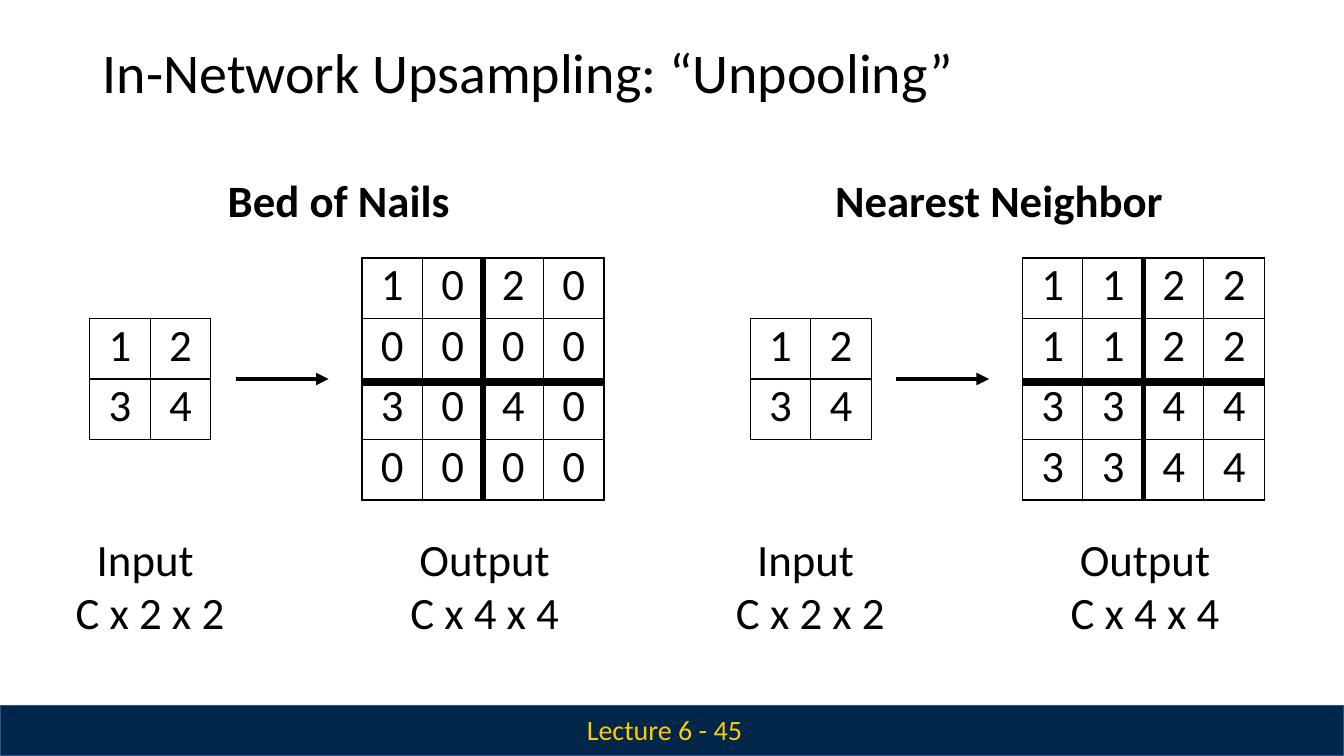
from pptx import Presentation
from pptx import util as u
from pptx.dml.color import RGBColor
from pptx.enum import shapes, text
from pptx.oxml.ns import qn
from lxml import etree

FONT = "Calibri"
COLOURS = {"ink": "000000", "navy": "00274A", "edge": "2D518E", "gold": "FFC904"}
CELL = 60
THIN, BAR_ACROSS, BAR_DOWN = 1, 6, 4.5
INPUT = ["12", "34"]
PANELS = [
    (74, "Bed of Nails", ["1020", "0000", "3040", "0000"]),
    (729, "Nearest Neighbor", ["1122", "1122", "3344", "3344"]),
]


def px(length):
    """One px is a hundredth of an inch."""
    return u.Emu(length * 9144)


def colour(name):
    return RGBColor.from_string(COLOURS[name])


def style(para, size, ink="ink", bold=False):
    para.font.name = FONT
    para.font.size = u.Pt(size)
    para.font.bold = bold
    para.font.color.rgb = colour(ink)


def add_text(page, box, words, size, top=0, left=0, **look):
    frame = page.shapes.add_textbox(*map(px, box)).text_frame
    frame.word_wrap = True
    frame.margin_left, frame.margin_top = px(left), px(top)
    frame.margin_right = frame.margin_bottom = 0
    para = frame.paragraphs[0]
    para.text = words
    style(para, size, **look)
    return para


def set_borders(cell, widths):
    props = cell._tc.get_or_add_tcPr()
    for side, width in widths.items():
        line = etree.SubElement(props, qn(f"a:ln{side}"), w=str(u.Pt(width)))
        fill = etree.SubElement(line, qn("a:solidFill"))
        etree.SubElement(fill, qn("a:srgbClr"), val=COLOURS["ink"])


def add_grid(page, left, top, rows, split=None):
    """Square grid of digits; heavy bars cross before row and column `split`."""
    count = len(rows)
    frame = page.shapes.add_table(count, count, px(left), px(top),
                                  px(CELL * count), px(CELL * count))
    table = frame.table
    table.first_row = table.horz_banding = False
    for r, digits in enumerate(rows):
        # The row above the heavy bar takes a little height from the one below.
        shift = {split: -3, split - 1: 3}.get(r, 0) if split else 0
        table.rows[r].height = px(CELL + shift)
        for c, digit in enumerate(digits):
            cell = table.cell(r, c)
            cell.margin_left = cell.margin_right = 0
            cell.margin_top = cell.margin_bottom = 0
            set_borders(cell, {
                "L": BAR_DOWN if c == split else THIN,
                "R": BAR_DOWN if c + 1 == split else THIN,
                "T": BAR_ACROSS if r == split else THIN,
                "B": BAR_ACROSS if r + 1 == split else THIN,
            })
            cell.fill.background()
            para = cell.text_frame.paragraphs[0]
            para.text = digit
            para.alignment = text.PP_ALIGN.CENTER
            if r == split:
                para.line_spacing = u.Pt(36.5)
            style(para, 32)


def add_arrow(page, left, right, y):
    arrow = page.shapes.add_connector(shapes.MSO_CONNECTOR.STRAIGHT,
                                      px(left), px(y), px(right), px(y))
    arrow.line.color.rgb = colour("ink")
    arrow.line.width = u.Pt(3)
    etree.SubElement(arrow.line._get_or_add_ln(), qn("a:tailEnd"), type="triangle")
    etree.SubElement(arrow._element.spPr, qn("a:effectLst"))


def add_caption(page, left, top, name, size, indent):
    para = add_text(page, (left, top, 150, 109), f"{name}\vC x {size} x {size}", 32, top=6)
    para.line_spacing = u.Pt(37.9)
    props = para._p.get_or_add_pPr()
    props.set("marL", str(px(1)))
    props.set("indent", str(px(indent)))


def add_panel(page, left, top, heading, output):
    title = add_text(page, (left + 62, top, 400, 56), heading, 32, top=2, bold=True)
    title.alignment = text.PP_ALIGN.CENTER
    add_grid(page, left + 15, top + 147, INPUT)
    add_arrow(page, left + 160, left + 252, top + 207)
    add_grid(page, left + 285, top + 87, output, split=2)
    add_caption(page, left, top + 353, "Input", 2, 21)
    add_caption(page, left + 332, top + 353, "Output", 4, 9)


def add_footer(page, left, top, width, height):
    band = page.shapes.add_shape(shapes.MSO_SHAPE.RECTANGLE,
                                 *map(px, (left, top, width, height)))
    band.shadow.inherit = False
    band.fill.solid()
    band.fill.fore_color.rgb = colour("navy")
    band.line.color.rgb = colour("edge")
    band.line.width = u.Pt(1)
    add_text(page, (left + 581, top + 7, 175, 34), "Lecture 6 - 45", 20, left=1, ink="gold")


def main():
    deck = Presentation()
    deck.slide_width, deck.slide_height = u.Inches(13.33), u.Inches(7.5)
    page = deck.slides.add_slide(deck.slide_layouts[6])
    add_footer(page, 0, 700, 1333, 50)
    add_text(page, (48, 35, 1238, 69), "In-Network Upsampling: “Unpooling”", 40, top=2, left=54)
    for left, heading, output in PANELS:
        add_panel(page, left, 169, heading, output)
    deck.save("out.pptx")


if __name__ == "__main__":
    main()
